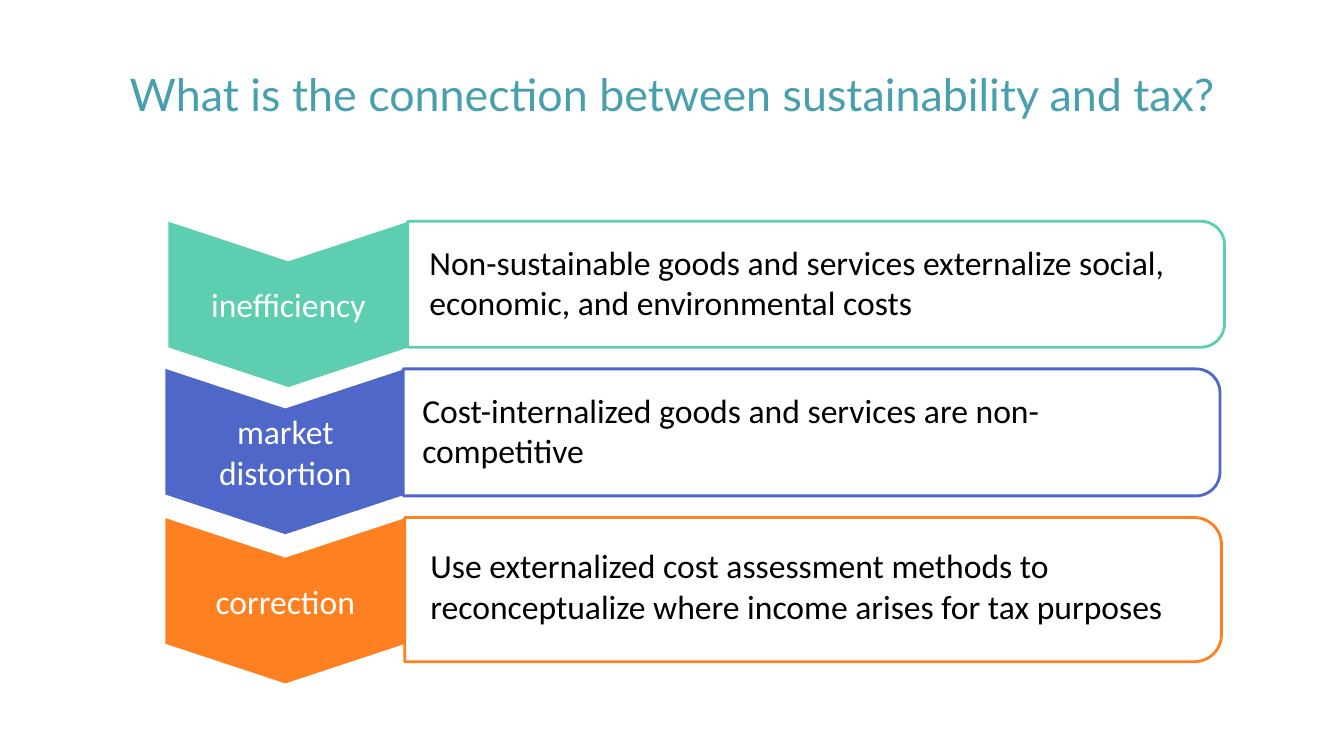
from dataclasses import dataclass

from pptx import Presentation
from pptx import util as u
from pptx.dml.color import RGBColor
from pptx.enum import shapes, text

COLORS = {
    "title": "48A0AF",
    "green": "5DCEAF",
    "blue": "4E67C8",
    "orange": "FF8021",
    "white": "FFFFFF",
    "black": "000000",
}
CHEVRON_SIZE = (1.64, 2.38)
PANEL_LENGTH = 8.1


@dataclass
class Box:
    left: float
    top: float
    width: float
    height: float


@dataclass
class Step:
    label: str
    detail: str
    color: str
    chevron: tuple[float, float]
    panel: Box
    note: Box


STEPS = [
    Step("inefficiency",
         "Non-sustainable goods and services externalize social, "
         "economic, and environmental costs",
         "green", (2.04, 1.83), Box(7.47, -1.23, 1.25, PANEL_LENGTH),
         Box(4.16, 2.35, 7.95, 0.91)),
    Step("market distortion",
         "Cost-internalized goods and services are non-competitive",
         "blue", (2.01, 3.29), Box(7.42, 0.24, 1.26, PANEL_LENGTH),
         Box(4.09, 3.82, 7.86, 0.91)),
    Step("correction",
         "Use externalized cost assessment methods to "
         "reconceptualize where income arises for tax purposes",
         "orange", (2.01, 4.77), Box(7.35, 1.8, 1.43, PANEL_LENGTH),
         Box(4.17, 5.36, 7.95, 1.31)),
]


def rgb(name: str) -> RGBColor:
    return RGBColor.from_string(COLORS[name])


def lengths(box: Box) -> list[u.Length]:
    return [u.Inches(v) for v in (box.left, box.top, box.width, box.height)]


def write(sp, words: str, *, color: str, size: float = 24, font: str = "Calibri",
          align=text.PP_ALIGN.LEFT, anchor=text.MSO_ANCHOR.TOP, before: float = 0) -> None:
    tf = sp.text_frame
    tf.word_wrap = True
    tf.vertical_anchor = anchor
    p = tf.paragraphs[0]
    p.alignment = align
    p.space_before = u.Pt(before)
    r = p.add_run()
    r.text = words
    r.font.name = font
    r.font.size = u.Pt(size)
    r.font.color.rgb = rgb(color)


def add_turned_shape(parent, kind, box: Box, fill: str, adjustments: list[float]):
    sp = parent.shapes.add_shape(kind, *lengths(box))
    sp.rotation = 90
    sp.shadow.inherit = False
    for i, value in enumerate(adjustments):
        sp.adjustments[i] = value
    sp.fill.solid()
    sp.fill.fore_color.rgb = rgb(fill)
    return sp


def add_chevron(s, step: Step) -> None:
    sp = add_turned_shape(s, shapes.MSO_SHAPE.CHEVRON,
                          Box(*step.chevron, *CHEVRON_SIZE), step.color, [0.24])
    sp.line.fill.background()
    write(sp, step.label, color="white", align=text.PP_ALIGN.CENTER,
          anchor=text.MSO_ANCHOR.MIDDLE, before=2)
    sp.text_frame._txBody.bodyPr.set("vert", "vert270")


def add_panel(s, step: Step) -> None:
    group = s.shapes.add_group_shape()
    sp = add_turned_shape(group, shapes.MSO_SHAPE.ROUND_2_SAME_RECTANGLE,
                          step.panel, "white", [0.188, 0])
    sp.line.color.rgb = rgb(step.color)
    sp.line.width = u.Pt(2)
    note = group.shapes.add_textbox(*lengths(step.note))
    write(note, step.detail, color="black")
    note.text_frame.auto_size = text.MSO_AUTO_SIZE.SHAPE_TO_FIT_TEXT


def add_title(s, words: str) -> None:
    title = s.shapes.title
    title.left, title.top, title.width, title.height = lengths(Box(0.67, 0.3, 12, 1.25))
    write(title, words, color="title", size=32, font="Lato",
          align=text.PP_ALIGN.CENTER, anchor=text.MSO_ANCHOR.MIDDLE)


def main() -> None:
    prs = Presentation()
    prs.slide_width, prs.slide_height = u.Inches(13.33), u.Inches(7.5)
    s = prs.slides.add_slide(prs.slide_layouts[5])
    add_title(s, "What is the connection between sustainability and tax?")
    for step in STEPS:
        add_chevron(s, step)
    for step in STEPS:
        add_panel(s, step)
    prs.save("out.pptx")


if __name__ == "__main__":
    main()
